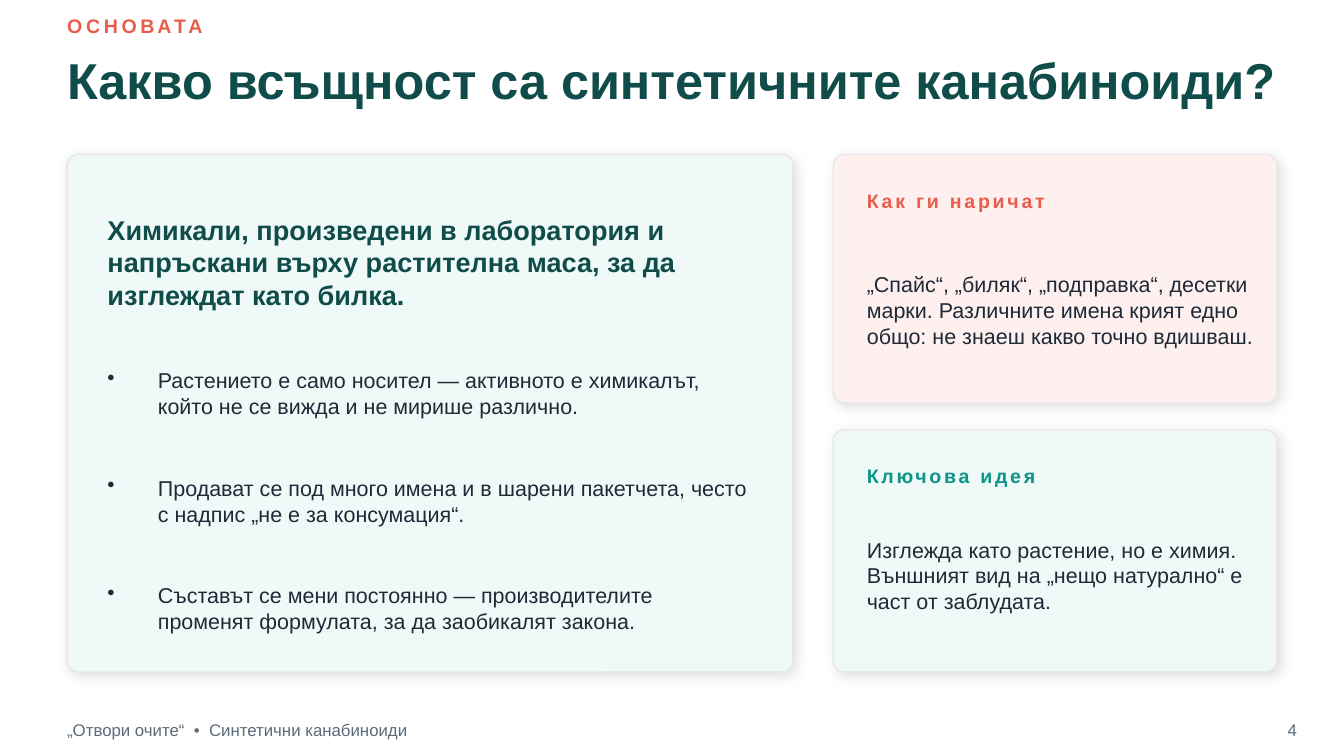
from lxml import etree
from pptx import Presentation
from pptx.dml.color import RGBColor
from pptx.enum import shapes, text
from pptx.oxml import ns
from pptx.util import Inches, Pt

DARK_TEAL = RGBColor(0x0F, 0x4C, 0x4A)
TEAL = RGBColor(0x0D, 0x94, 0x88)
CORAL = RGBColor(0xE8, 0x5D, 0x4C)
MINT = RGBColor(0xEF, 0xFA, 0xF8)
BLUSH = RGBColor(0xFD, 0xF0, 0xEE)
BORDER = RGBColor(0xE5, 0xE7, 0xEB)
INK = RGBColor(0x1F, 0x29, 0x37)
SLATE = RGBColor(0x5B, 0x6B, 0x7A)

CORNER = 0.08
BULLET_INDENT = Pt(27)
SHADOW = (
    f'<a:effectLst {ns.nsdecls("a")}>'
    '<a:outerShdw blurRad="88900" dist="25400" dir="2700000" algn="bl" rotWithShape="0">'
    '<a:srgbClr val="000000"><a:alpha val="13000"/></a:srgbClr>'
    '</a:outerShdw></a:effectLst>'
)

# A 16:9 slide
prs = Presentation()
prs.slide_width = Inches(10)
prs.slide_height = prs.slide_width * 9 // 16
slide = prs.slides.add_slide(prs.slide_layouts[6])


def add_card(left, top, width, height, fill):
    card = slide.shapes.add_shape(
        shapes.MSO_SHAPE.ROUNDED_RECTANGLE,
        Inches(left), Inches(top), Inches(width), Inches(height))
    card.adjustments[0] = CORNER / min(width, height)
    card.fill.solid()
    card.fill.fore_color.rgb = fill
    card.line.color.rgb = BORDER
    card.line.width = Pt(0.75)
    card._element.spPr.append(etree.fromstring(SHADOW))


def add_text(left, top, width, height, runs, size, color, bold=False, bullet=False):
    """Place one paragraph; runs are (words, letter spacing in points)."""
    box = slide.shapes.add_textbox(
        Inches(left), Inches(top), Inches(width), Inches(height))
    frame = box.text_frame
    frame.word_wrap = True
    frame.vertical_anchor = text.MSO_ANCHOR.MIDDLE
    frame.margin_left = frame.margin_right = frame.margin_top = frame.margin_bottom = 0
    paragraph = frame.paragraphs[0]
    if bullet:
        props = paragraph._p.get_or_add_pPr()
        props.set("marL", str(BULLET_INDENT))
        props.set("indent", str(-BULLET_INDENT))
        etree.SubElement(props, ns.qn("a:buSzPct")).set("val", "100000")
        etree.SubElement(props, ns.qn("a:buChar")).set("char", "•")
    for words, spacing in runs:
        run = paragraph.add_run()
        run.text = words
        run.font.name = "Arial"
        run.font.size = Pt(size)
        run.font.bold = bold
        run.font.color.rgb = color
        if spacing:
            run._r.get_or_add_rPr().set("spc", str(round(spacing * 100)))
    return paragraph


# Heading
add_text(0.5, 0.06, 9, 0.26, [("ОСНОВАТА", 2)], 10.5, CORAL, bold=True)
add_text(0.5, 0.28, 9, 0.62, [("Какво всъщност са синтетичните канабиноиди?", 0)],
         27, DARK_TEAL, bold=True)

# Definition card with its three facts
add_card(0.5, 1.15, 5.4, 3.85, MINT)
definition = ("Химикали, произведени в лаборатория и напръскани върху "
              "растителна маса, за да изглеждат като билка.")
add_text(0.8, 1.4, 4.8, 1.1, [(definition, 0)], 14.5, DARK_TEAL, bold=True)

facts = [
    "Растението е само носител — активното е химикалът, който не се вижда "
    "и не мирише различно.",
    "Продават се под много имена и в шарени пакетчета, често с надпис "
    "„не е за консумация“.",
    "Съставът се мени постоянно — производителите променят формулата, "
    "за да заобикалят закона.",
]
for row, fact in enumerate(facts):
    add_text(0.8, 2.55 + 0.8 * row, 4.8, 0.75, [(fact, 0)], 11.5, INK, bullet=True)

# Side cards: top, height, body height, fill, label colour, label, body
side_cards = [
    (1.15, 1.85, 1.25, BLUSH, CORAL, "Как ги наричат",
     "„Спайс“, „биляк“, „подправка“, десетки марки. Различните имена крият "
     "едно общо: не знаеш какво точно вдишваш."),
    (3.2, 1.8, 1.1, MINT, TEAL, "Ключова идея",
     "Изглежда като растение, но е химия. Външният вид на „нещо натурално“ "
     "е част от заблудата."),
]
for top, height, body_height, fill, label_color, label, body in side_cards:
    add_card(6.2, top, 3.3, height, fill)
    add_text(6.45, top + 0.2, 2.9, 0.28, [(label, 1.5)], 10.5, label_color, bold=True)
    add_text(6.45, top + 0.53, 2.9, body_height, [(body, 0)], 11.5, INK)

# Footer, with widened spaces around the separator dot
wide_space = (" ", 2.5)
add_text(0.5, 5.28, 6, 0.3,
         [("„Отвори очите“", 0), wide_space, ("•", 0), wide_space,
          ("Синтетични канабиноиди", 0)], 9, SLATE)
page_number = add_text(9.3, 5.28, 0.35, 0.3, [("4", 0)], 9, SLATE)
page_number.alignment = text.PP_ALIGN.RIGHT

prs.save("out.pptx")
